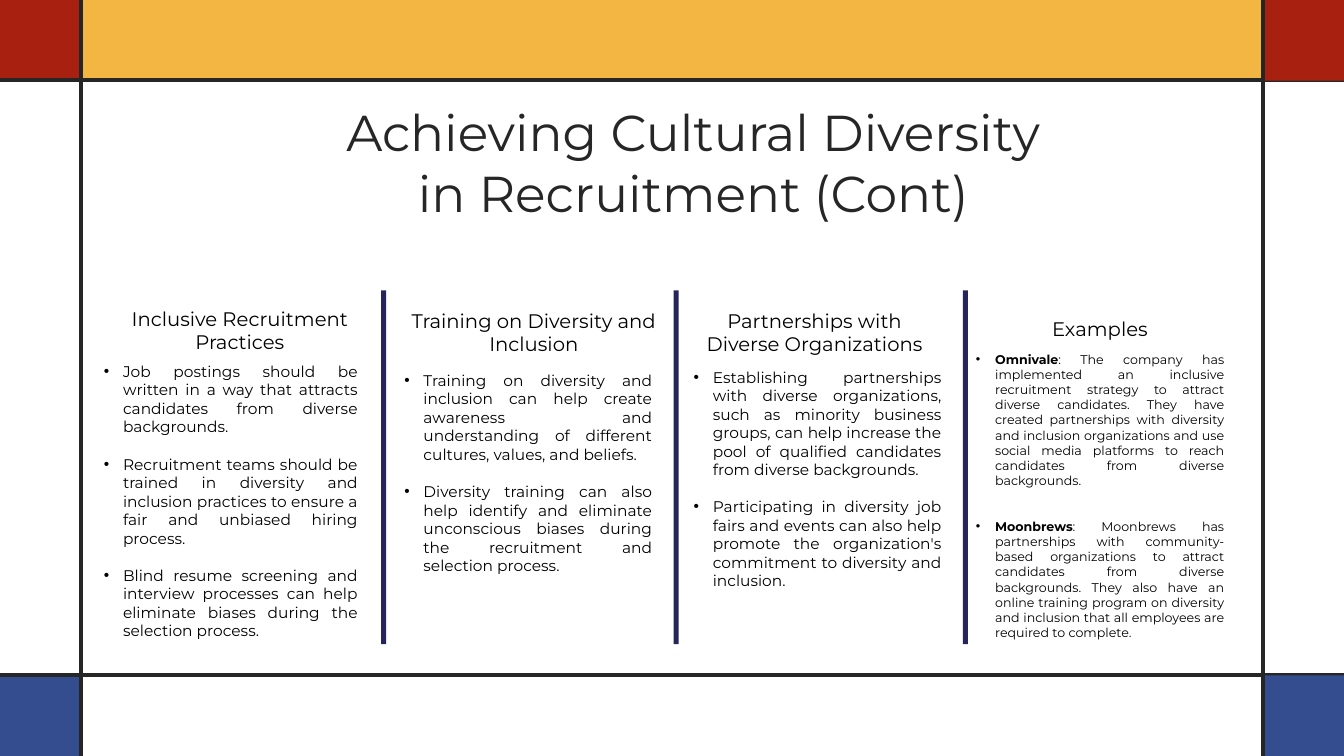
from lxml import etree
from pptx import Presentation
from pptx.dml.color import RGBColor
from pptx.enum.shapes import MSO_CONNECTOR, MSO_SHAPE
from pptx.enum.text import MSO_ANCHOR as Anchor, MSO_AUTO_SIZE as AutoSize, PP_ALIGN as Align
from pptx.oxml.ns import qn
from pptx.util import Inches, Pt

FONT = "Montserrat"
BLACK = RGBColor(0x00, 0x00, 0x00)
CHARCOAL = RGBColor(0x26, 0x26, 0x26)
YELLOW = RGBColor(0xF4, 0xB6, 0x43)
BLUE = RGBColor(0x34, 0x4D, 0x8F)
RED = RGBColor(0xA8, 0x21, 0x10)
NAVY = RGBColor(0x25, 0x25, 0x5B)

TITLE = "Achieving Cultural Diversity in Recruitment (Cont)"
COLUMNS = [
    {
        "heading": "Inclusive Recruitment Practices",
        "heading_box": (1.05, 2.99, 2.66, 0.57),
        "list_box": (0.93, 3.53, 2.72, 2.88),
        "size": 11, "gap": 13.4,
        "items": [
            ("", "Job postings should be written in a way that attracts candidates from diverse backgrounds."),
            ("", "Recruitment teams should be trained in diversity and inclusion practices to ensure a fair "
                 "and unbiased hiring process."),
            ("", "Blind resume screening and interview processes can help eliminate biases during the "
                 "selection process."),
        ],
    },
    {
        "heading": "Training on Diversity and Inclusion",
        "heading_box": (3.72, 3.01, 3.15, 0.57),
        "list_box": (3.91, 3.62, 2.66, 2.14),
        "size": 11, "gap": 13.4,
        "items": [
            ("", "Training on diversity and inclusion can help create awareness and understanding of "
                 "different cultures, values, and beliefs."),
            ("", "Diversity training can also help identify and eliminate unconscious biases during the "
                 "recruitment and selection process."),
        ],
    },
    {
        "heading": "Partnerships with Diverse Organizations",
        "heading_box": (6.75, 3.01, 2.66, 0.57),
        "list_box": (6.78, 3.59, 2.66, 2.32),
        "size": 11, "gap": 13.4,
        "items": [
            ("", "Establishing partnerships with diverse organizations, such as minority business groups, "
                 "can help increase the pool of qualified candidates from diverse backgrounds."),
            ("", "Participating in diversity job fairs and events can also help promote the organization's "
                 "commitment to diversity and inclusion."),
        ],
    },
    {
        "heading": "Examples",
        "heading_box": (9.55, 3.09, 2.72, 0.34),
        "list_box": (9.58, 3.43, 2.66, 2.98),
        "size": 9, "gap": 22,
        "items": [
            ("Omnivale", ": The company has implemented an inclusive recruitment strategy to attract diverse "
                         "candidates. They have created partnerships with diversity and inclusion "
                         "organizations and use social media platforms to reach candidates from diverse "
                         "backgrounds."),
            ("Moonbrews", ": Moonbrews has partnerships with community-based organizations to attract "
                          "candidates from diverse backgrounds. They also have an online training program on "
                          "diversity and inclusion that all employees are required to complete."),
        ],
    },
]

WIDTH, HEIGHT, BAND = 13.33, 7.5, 0.8
RIGHT, BOTTOM = WIDTH - BAND, HEIGHT - BAND
TOP_LINE = 0.79
TITLE_BOX = (3.27, 0.95, 7.21, 1.31)
DIVIDER_LEFTS = (3.78, 6.68, 9.55)
DIVIDER_TOP, DIVIDER_WIDTH, DIVIDER_HEIGHT = 2.88, 0.05, 3.51
INDENT = Inches(0.19)


def add_block(slide, box, color):
    shape = slide.shapes.add_shape(MSO_SHAPE.RECTANGLE, *map(Inches, box))
    shape.shadow.inherit = False
    shape.fill.solid()
    shape.fill.fore_color.rgb = color
    shape.line.fill.background()


def add_rule(slide, *ends):
    rule = slide.shapes.add_connector(MSO_CONNECTOR.STRAIGHT, *map(Inches, ends))
    rule.line.color.rgb = CHARCOAL
    rule.line.width = Pt(2.75)
    etree.SubElement(rule._element.spPr, qn("a:effectLst"))


def place(shape, box):
    shape.left, shape.top, shape.width, shape.height = map(Inches, box)
    frame = shape.text_frame
    frame.word_wrap = True
    frame.auto_size = AutoSize.SHAPE_TO_FIT_TEXT
    frame.vertical_anchor = Anchor.MIDDLE
    return frame


def add_run(paragraph, text, size, color=BLACK, bold=False):
    run = paragraph.add_run()
    run.text = text
    run.font.name = FONT
    run.font.size = Pt(size)
    run.font.bold = bold
    run.font.color.rgb = color


def write_line(shape, box, text, size, color=BLACK):
    paragraph = place(shape, box).paragraphs[0]
    paragraph.alignment = Align.CENTER
    add_run(paragraph, text, size, color)


def add_bullet(paragraph):
    properties = paragraph._p.get_or_add_pPr()
    properties.set("marL", str(INDENT))
    properties.set("indent", str(-INDENT))
    etree.SubElement(properties, qn("a:buFont"), typeface="Arial")
    etree.SubElement(properties, qn("a:buChar"), char="•")


def write_list(shape, column):
    frame = place(shape, column["list_box"])
    for number, (lead, text) in enumerate(column["items"]):
        paragraph = frame.add_paragraph() if number else frame.paragraphs[0]
        paragraph.alignment = Align.JUSTIFY
        paragraph.space_before = Pt(column["gap"] if number else 0)
        add_bullet(paragraph)
        if lead:
            add_run(paragraph, lead, column["size"], bold=True)
        add_run(paragraph, text, column["size"])


def draw_frame(slide):
    add_block(slide, (BAND, 0, RIGHT - BAND, BAND), YELLOW)
    corners = ((BOTTOM, BLUE), (0, RED))
    for top, color in corners:
        add_block(slide, (0, top, BAND, BAND), color)
    for level in (TOP_LINE, BOTTOM):
        add_rule(slide, 0, level, WIDTH, level)
    add_rule(slide, BAND, 0, BAND, HEIGHT)
    for top, color in corners:
        add_block(slide, (RIGHT, top, BAND, BAND), color)
    add_rule(slide, RIGHT, 0, RIGHT, HEIGHT)


def main():
    presentation = Presentation()
    presentation.slide_width, presentation.slide_height = Inches(WIDTH), Inches(HEIGHT)
    layout = presentation.slide_layouts.get_by_name("Comparison")
    slide = presentation.slides.add_slide(layout)
    draw_frame(slide)
    write_line(slide.shapes.title, TITLE_BOX, TITLE, 36, CHARCOAL)
    for index, column in enumerate(COLUMNS, start=1):
        box = column["heading_box"]
        heading = slide.shapes.add_textbox(*map(Inches, box))
        write_line(heading, box, column["heading"], 14)
        write_list(slide.placeholders[index], column)
    for left in DIVIDER_LEFTS:
        add_block(slide, (left, DIVIDER_TOP, DIVIDER_WIDTH, DIVIDER_HEIGHT), NAVY)
    presentation.save("out.pptx")


if __name__ == "__main__":
    main()
